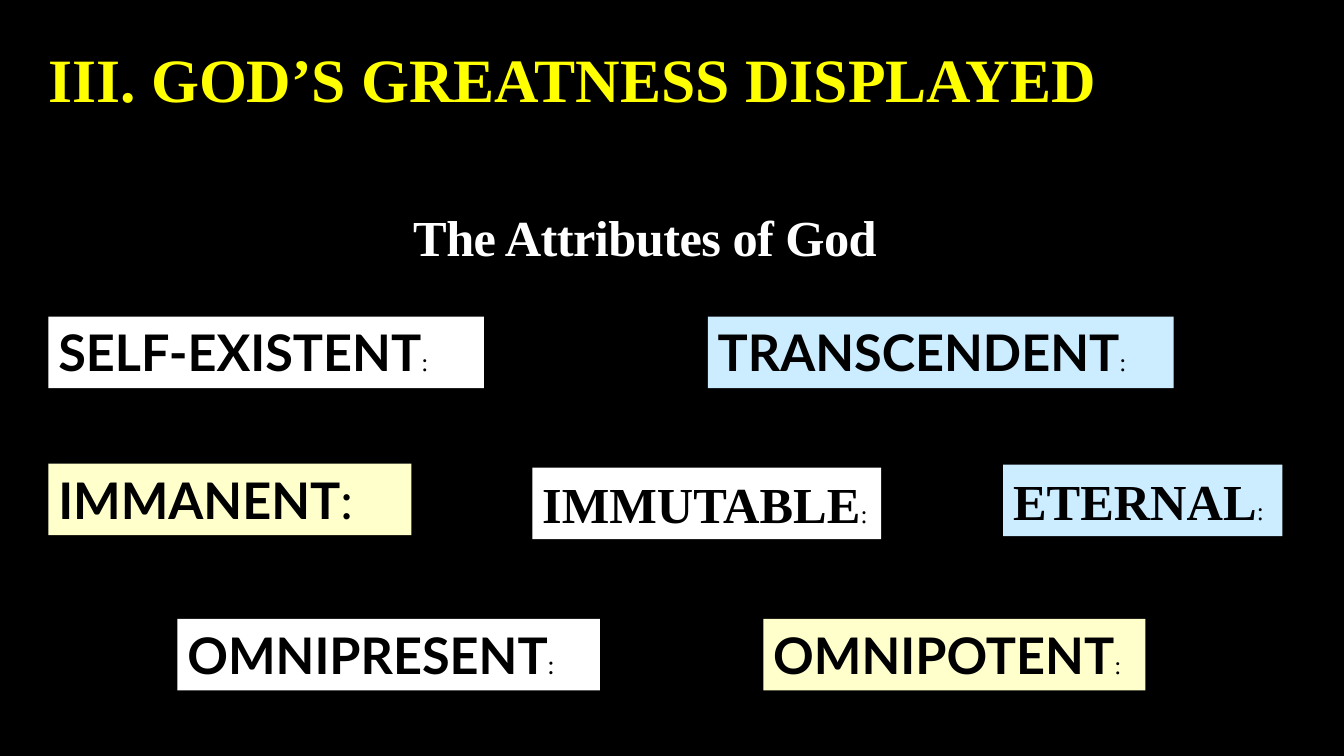
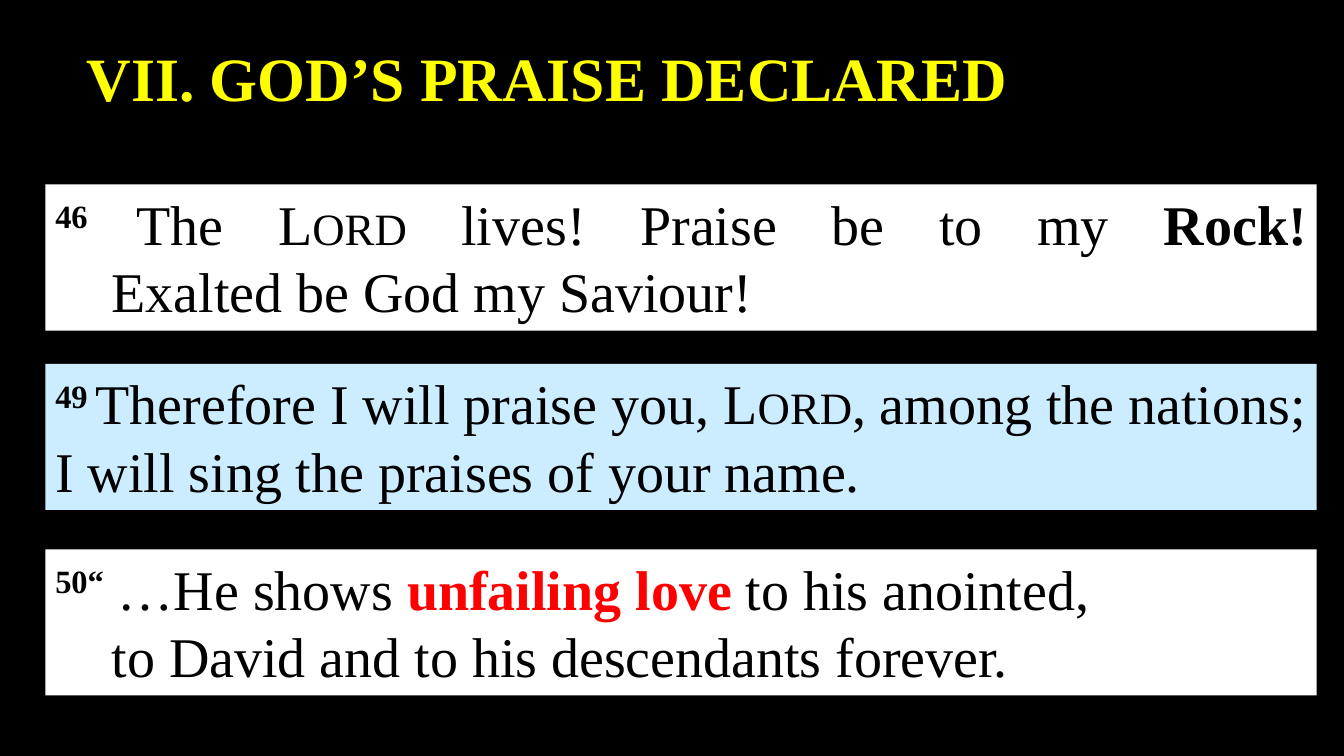
"""Build two sermon slides: the attributes of God, and verses of praise."""
from pptx import Presentation
from pptx.dml.color import RGBColor
from pptx.enum.shapes import MSO_SHAPE
from pptx.enum.text import MSO_ANCHOR, MSO_AUTO_SIZE, PP_ALIGN
from pptx.util import Inches, Pt

RECTANGLE = MSO_SHAPE.RECTANGLE
TOP = MSO_ANCHOR.TOP
FIXED_SIZE = MSO_AUTO_SIZE.NONE
LEFT, JUSTIFY = PP_ALIGN.LEFT, PP_ALIGN.JUSTIFY

BLACK = RGBColor(0x00, 0x00, 0x00)
WHITE = RGBColor(0xFF, 0xFF, 0xFF)
YELLOW = RGBColor(0xFF, 0xFF, 0x00)
RED = RGBColor(0xFF, 0x00, 0x00)
PALE_BLUE = RGBColor(0xCC, 0xEC, 0xFF)
PALE_YELLOW = RGBColor(0xFF, 0xFF, 0xCC)

SERIF, SANS = "Times New Roman", "Lato"
TITLE_SIZE, LABEL_SIZE, COLON_SIZE, VERSE_SIZE = 44, 36, 18, 40
TITLE_HEIGHT, LABEL_HEIGHT, VERSE_HEIGHT = 0.84, 0.71, 1.45
VERSE_LEFT, VERSE_WIDTH, HANGING_INDENT = 0.45, 12.61, 0.56

ATTRIBUTES_TITLE = ("III. GOD’S GREATNESS DISPLAYED", 0.38, 0.36, 10.7)
ATTRIBUTES_HEADING = ("The Attributes of God", 4, 2, 4.84)
ATTRIBUTES = [
    ("SELF-EXISTENT", 0.48, 3.14, 4.32, WHITE, SANS, SERIF, COLON_SIZE),
    ("TRANSCENDENT", 7.02, 3.14, 4.62, PALE_BLUE, SANS, SERIF, COLON_SIZE),
    ("IMMANENT", 0.48, 4.6, 3.6, PALE_YELLOW, SANS, SANS, LABEL_SIZE),
    ("IMMUTABLE", 5.28, 4.64, 3.46, WHITE, SERIF, SERIF, COLON_SIZE),
    ("ETERNAL", 9.95, 4.61, 2.77, PALE_BLUE, SERIF, SERIF, COLON_SIZE),
    ("OMNIPRESENT", 1.76, 6.14, 4.19, WHITE, SANS, SANS, COLON_SIZE),
    ("OMNIPOTENT", 7.57, 6.14, 3.79, PALE_YELLOW, SANS, SERIF, COLON_SIZE),
]

PLAIN = {}
BOLD = {"bold": True}
NUMBER = {"bold": True, "baseline": "30000"}
SMALL_CAPS = {"cap": "small"}
STRESSED = {"bold": True, "color": RED}
LINE_BREAK = ("\n", PLAIN)

PRAISE_TITLE = ("VII. GOD’S PRAISE DECLARED", 0.76, 0.35, 9.43)
VERSES = [
    (1.83, WHITE, JUSTIFY, HANGING_INDENT, [
        ("46 ", NUMBER), ("The ", PLAIN), ("Lord", SMALL_CAPS),
        (" lives! Praise be to my ", PLAIN), ("Rock!", BOLD), LINE_BREAK,
        ("Exalted be God my Saviour!", PLAIN)]),
    (3.61, PALE_BLUE, LEFT, 0, [
        ("49 ", NUMBER), ("Therefore I will praise you, ", PLAIN),
        ("Lord", SMALL_CAPS),
        (", among the nations; I will sing the praises of your name.", PLAIN)]),
    (5.45, WHITE, LEFT, HANGING_INDENT, [
        ("50“", NUMBER), (" …He shows ", PLAIN),
        ("unfailing love ", STRESSED), ("to his anointed,", PLAIN), LINE_BREAK,
        ("to David and to his descendants forever.", PLAIN)]),
]


def add_span(para, text, size, font=SERIF, color=BLACK, bold=False, **attributes):
    """Append one formatted run, or a line break."""
    if text == "\n":
        para.add_line_break()
        return
    span = para.add_run()
    span.text = text
    span.font.name = font
    span.font.size = Pt(size)
    span.font.bold = bold
    span.font.color.rgb = color
    for name, value in attributes.items():
        span.font._element.set(name, value)


def prepare_frame(box, align=LEFT):
    """Set the shared text layout and return the first paragraph."""
    frame = box.text_frame
    frame.word_wrap = True
    frame.auto_size = FIXED_SIZE
    frame.vertical_anchor = TOP
    para = frame.paragraphs[0]
    para.alignment = align
    return para


def add_panel(page, left, top, width, height, fill, align=LEFT):
    """Add a filled rectangle and return its paragraph."""
    panel = page.shapes.add_shape(
        RECTANGLE, Inches(left), Inches(top), Inches(width), Inches(height))
    panel.shadow.inherit = False
    panel.fill.solid()
    panel.fill.fore_color.rgb = fill
    panel.line.fill.background()
    return prepare_frame(panel, align)


def add_page(deck, text, left, top, width):
    """Add a slide with the shared title style."""
    page = deck.slides.add_slide(deck.slide_layouts.get_by_name("Title Only"))
    title = page.shapes.title
    title.left, title.top = Inches(left), Inches(top)
    title.width, title.height = Inches(width), Inches(TITLE_HEIGHT)
    add_span(prepare_frame(title, JUSTIFY), text, TITLE_SIZE, color=YELLOW, bold=True)
    return page


def build_attributes(deck):
    """Build the slide of labelled attributes."""
    page = add_page(deck, *ATTRIBUTES_TITLE)
    text, left, top, width = ATTRIBUTES_HEADING
    heading = page.shapes.add_textbox(
        Inches(left), Inches(top), Inches(width), Inches(LABEL_HEIGHT))
    add_span(prepare_frame(heading), text, LABEL_SIZE, color=WHITE, bold=True, spc="-40")
    for name, left, top, width, fill, font, colon_font, colon_size in ATTRIBUTES:
        para = add_panel(page, left, top, width, LABEL_HEIGHT, fill)
        add_span(para, name, LABEL_SIZE, font, bold=True)
        add_span(para, ":", colon_size, colon_font)


def build_praise(deck):
    """Build the slide of verses."""
    page = add_page(deck, *PRAISE_TITLE)
    for top, fill, align, indent, spans in VERSES:
        para = add_panel(page, VERSE_LEFT, top, VERSE_WIDTH, VERSE_HEIGHT, fill, align)
        properties = para._p.get_or_add_pPr()
        properties.set("marL", str(Inches(indent)))
        properties.set("indent", str(-Inches(indent)))
        for text, style in spans:
            add_span(para, text, VERSE_SIZE, **style)


def main():
    """Create and save the deck."""
    deck = Presentation()
    deck.slide_width, deck.slide_height = Inches(13.33), Inches(7.5)
    background = deck.slide_master.background.fill
    background.solid()
    background.fore_color.rgb = BLACK
    build_attributes(deck)
    build_praise(deck)
    deck.save("out.pptx")


if __name__ == "__main__":
    main()
